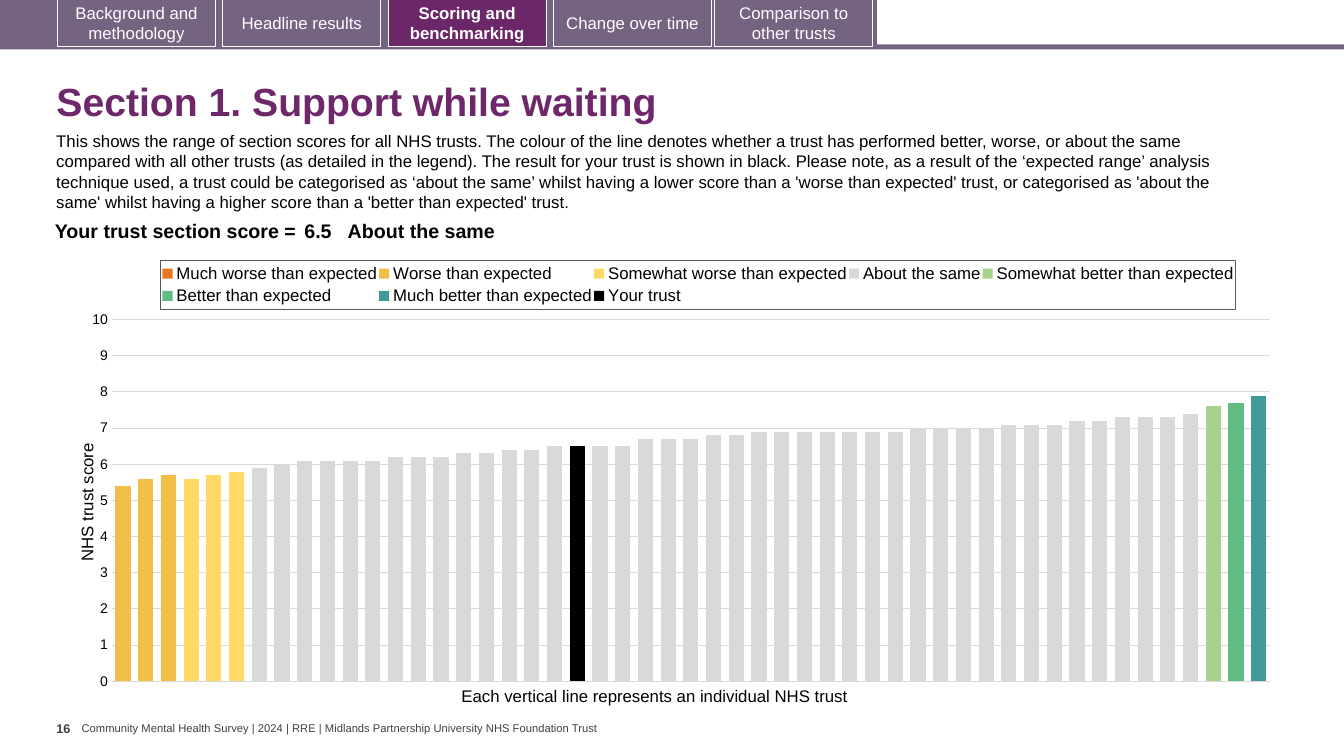
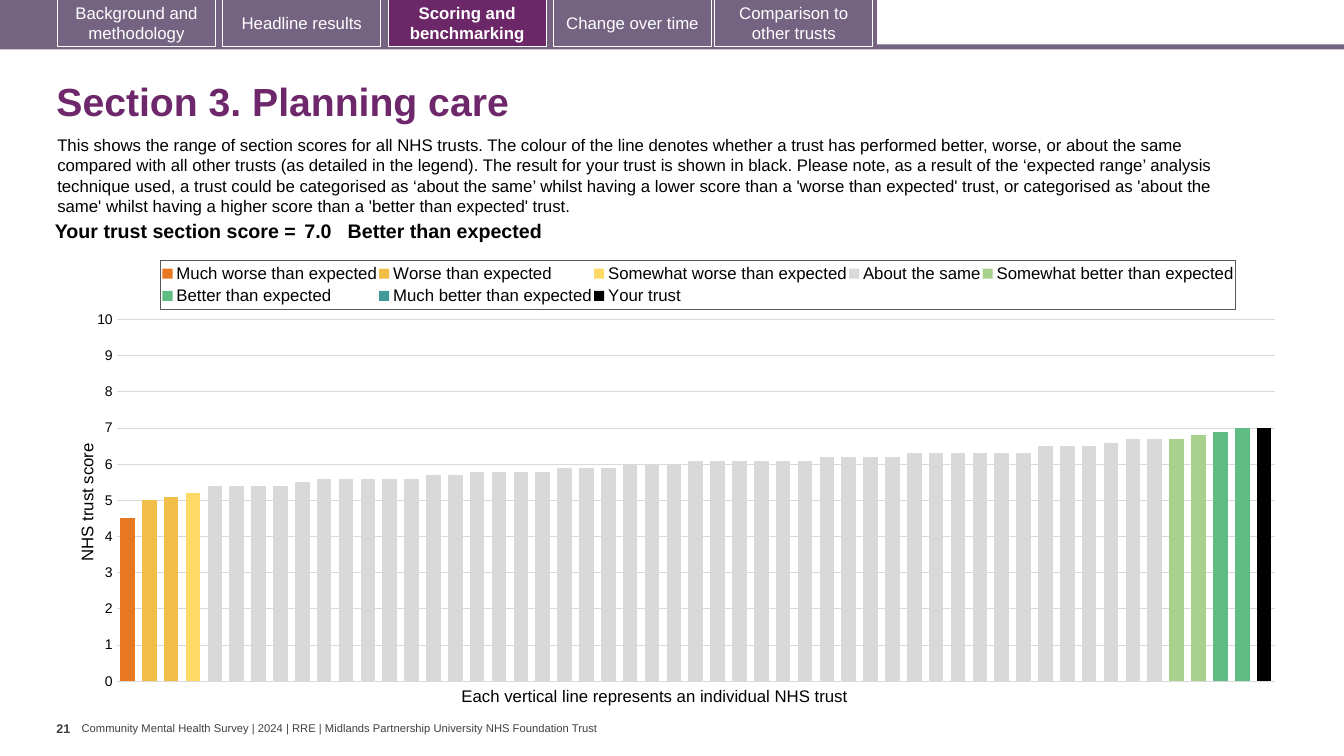
"""Build two survey slides that show how trusts score in a section."""
import copy
import dataclasses
import typing

import pptx
import pptx.chart.data
import pptx.dml.color
import pptx.enum.chart
import pptx.enum.shapes
import pptx.enum.text
import pptx.oxml
import pptx.oxml.ns
import pptx.util

COLS, ROWS = 80, 45
UNIT = pptx.util.Inches(1) / 6
FONT = "Arial"
HUES = {
    "band": "756382",
    "live": "6B2768",
    "title": "6D276A",
    "white": "FFFFFF",
    "black": "000000",
    "foot": "404040",
    "grid": "D9D9D9",
    "frame": "595959",
}
BANDS = {
    "Much worse than expected": "E87722",
    "Worse than expected": "F1BE48",
    "Somewhat worse than expected": "FFD966",
    "About the same": "D9D9D9",
    "Somewhat better than expected": "A9D18E",
    "Better than expected": "5FBD83",
    "Much better than expected": "419999",
}
INTRO = (
    "This shows the range of section scores for all NHS trusts. The colour of the line "
    "denotes whether a trust has performed better, worse, or about the same compared with "
    "all other trusts (as detailed in the legend). The result for your trust is shown in "
    "black. Please note, as a result of the ‘expected range’ analysis technique used, a "
    "trust could be categorised as ‘about the same’ whilst having a lower score than a "
    "'worse than expected' trust, or categorised as 'about the same' whilst having a higher "
    "score than a 'better than expected' trust."
)
FOOTER = (
    "Community Mental Health Survey | 2024 | RRE | "
    "Midlands Partnership University NHS Foundation Trust"
)


class Box(typing.NamedTuple):
    col: float
    row: float
    wide: float
    high: float

    def size(self) -> list[int]:
        return [round(n * UNIT) for n in self]


@dataclasses.dataclass(frozen=True)
class Tab:
    label: str
    col: float
    live: bool = False


@dataclasses.dataclass(frozen=True)
class Style:
    size: float
    hue: str = "black"
    bold: bool = False


@dataclasses.dataclass(frozen=True)
class Section:
    title: str
    page: str
    score: str
    grade: str
    rank: int
    intro: Box
    plot: float
    bands: list[list[float]]


TABS = [
    Tab("Background and methodology", 3.42),
    Tab("Headline results", 13.26),
    Tab("Scoring and benchmarking", 23.1, True),
    Tab("Change over time", 32.94),
    Tab("Comparison to other trusts", 42.54),
]
SECTIONS = [
    Section(
        "Section 1. Support while waiting", "16", "6.5", "About the same", 21,
        Box(2.76, 7.5, 72.78, 5.46), 3.6,
        [
            [],
            [5.4, 5.6, 5.7],
            [5.6, 5.7, 5.8],
            [5.9, 6, 6.1, 6.1, 6.1, 6.1, 6.2, 6.2, 6.2, 6.3, 6.3, 6.4, 6.4, 6.5,
             6.5, 6.5, 6.5, 6.7, 6.7, 6.7, 6.8, 6.8, 6.9, 6.9, 6.9, 6.9, 6.9, 6.9,
             6.9, 7, 7, 7, 7, 7.1, 7.1, 7.1, 7.2, 7.2, 7.3, 7.3, 7.3, 7.4],
            [7.6],
            [7.7],
            [7.9],
        ],
    ),
    Section(
        "Section 3. Planning care", "21", "7.0", "Better than expected", 53,
        Box(2.82, 7.74, 72.78, 5.46), 4,
        [
            [4.5],
            [5, 5.1],
            [5.2],
            [5.4, 5.4, 5.4, 5.4, 5.5, 5.6, 5.6, 5.6, 5.6, 5.6, 5.7, 5.7, 5.8, 5.8,
             5.8, 5.8, 5.9, 5.9, 5.9, 6, 6, 6, 6.1, 6.1, 6.1, 6.1, 6.1, 6.1, 6.2,
             6.2, 6.2, 6.2, 6.3, 6.3, 6.3, 6.3, 6.3, 6.3, 6.5, 6.5, 6.5, 6.6, 6.7, 6.7],
            [6.7, 6.8],
            [6.9, 7, 7],
            [],
        ],
    ),
]


def tint(code: str) -> pptx.dml.color.RGBColor:
    return pptx.dml.color.RGBColor.from_string(code)


def dress(font, style: Style) -> None:
    font.name = FONT
    font.size = pptx.util.Pt(style.size)
    font.bold = style.bold
    font.color.rgb = tint(HUES[style.hue])


def write(frame, text: str, style: Style, align: str = "LEFT"):
    para = frame.paragraphs[0]
    para.alignment = getattr(pptx.enum.text.PP_ALIGN, align)
    run = para.add_run()
    run.text = text
    dress(run.font, style)
    return para


def add_text(slide, box: Box, text: str, style: Style, bare: bool = False) -> None:
    frame = slide.shapes.add_textbox(*box.size()).text_frame
    frame.word_wrap = True
    if bare:
        frame.margin_left = frame.margin_right = 0
    write(frame, text, style)


def add_block(slide, box: Box, hue: str, edge: bool = False):
    kind = pptx.enum.shapes.MSO_SHAPE.RECTANGLE
    shape = slide.shapes.add_shape(kind, *box.size())
    shape.shadow.inherit = False
    shape.fill.solid()
    shape.fill.fore_color.rgb = tint(HUES[hue])
    if edge:
        shape.line.color.rgb = tint(HUES["white"])
        shape.line.width = pptx.util.Pt(0.75)
    else:
        shape.line.fill.background()
    return shape


def add_tabs(slide) -> None:
    add_block(slide, Box(0, 2.64, COLS, 0.3), "band")
    add_block(slide, Box(0, 0, 52.2, 2.82), "band")
    for tab in TABS:
        hue = "live" if tab.live else "band"
        shape = add_block(slide, Box(tab.col, -0.06, 9.42, 2.82), hue, True)
        shape.text_frame.word_wrap = True
        shape.text_frame.vertical_anchor = pptx.enum.text.MSO_ANCHOR.MIDDLE
        write(shape.text_frame, tab.label, Style(12, "white", tab.live), "CENTER")


def add_title(slide, text: str) -> None:
    title = slide.shapes.title
    title.left, title.top, title.width, title.height = Box(2.76, 4.02, 74.94, 4.32).size()
    title.text_frame.vertical_anchor = pptx.enum.text.MSO_ANCHOR.MIDDLE
    write(title.text_frame, text, Style(28, "title", True)).line_spacing = 0.9


def add_score(slide, part: Section) -> None:
    box = Box(2.1, 12.9, 70.14, 1.86)
    table = slide.shapes.add_table(1, 3, *box.size()).table
    table.first_row = table.horz_banding = False
    pad = pptx.util.Inches(0.04)
    cells = [
        ("Your trust section score =", 15.78, "RIGHT", pad),
        (part.score, 2.82, "LEFT", pad),
        (part.grade, 51.54, "LEFT", 0),
    ]
    for spot, (text, wide, align, side) in enumerate(cells):
        table.columns[spot].width = round(wide * UNIT)
        cell = table.cell(0, spot)
        cell.fill.background()
        cell.margin_top = cell.margin_bottom = pad
        cell.margin_left = cell.margin_right = side
        write(cell.text_frame, text, Style(14, bold=True), align)


def arrange(node, spot: int, inner: bool = False, **shares: float) -> None:
    for old in node.xpath("./c:layout"):
        node.remove(old)
    marks = '<c:layoutTarget val="inner"/>' if inner else ""
    marks += '<c:xMode val="edge"/><c:yMode val="edge"/>'
    marks += "".join(f'<c:{key} val="{num / 100:.4f}"/>' for key, num in shares.items())
    space = pptx.oxml.ns.nsdecls("c")
    node.insert(spot, pptx.oxml.parse_xml(
        f"<c:layout {space}><c:manualLayout>{marks}</c:manualLayout></c:layout>"))


def split_last(area) -> None:
    main = area.xpath("./c:barChart")[0]
    extra = copy.deepcopy(main)
    main.remove(main.xpath("./c:ser")[-1])
    for ser in extra.xpath("./c:ser")[:-1]:
        extra.remove(ser)
    main.addnext(extra)
    axes = [copy.deepcopy(axis) for axis in area.xpath("./c:catAx | ./c:valAx")]
    area.xpath("./c:valAx")[0].addnext(axes[0])
    axes[0].addnext(axes[1])
    for node in [extra, *axes]:
        for mark in node.xpath("./c:axId | ./c:crossAx"):
            mark.set("val", mark.get("val").lstrip("-"))
    right = axes[1]
    for node in right.xpath("./c:title | ./c:majorGridlines"):
        right.remove(node)
    for key, word in {"axPos": "r", "tickLblPos": "none", "crosses": "max"}.items():
        right.xpath(f"./c:{key}")[0].set("val", word)


def style_axes(chart) -> None:
    chart.category_axis.visible = False
    axis = chart.value_axis
    axis.minimum_scale, axis.maximum_scale, axis.major_unit = 0, 10, 1
    axis.major_tick_mark = pptx.enum.chart.XL_TICK_MARK.NONE
    axis.format.line.fill.background()
    dress(axis.tick_labels.font, Style(10))
    grid = axis.major_gridlines.format.line
    grid.color.rgb = tint(HUES["grid"])
    grid.width = pptx.util.Pt(0.75)
    title = axis.axis_title
    write(title.text_frame, "NHS trust score", Style(12), "CENTER")
    turn = title.element.xpath(".//a:bodyPr")[0]
    turn.set("rot", "-5400000")
    turn.set("vert", "horz")
    arrange(title.element, 1, x=0.5, y=42.7)


def style_legend(chart) -> None:
    chart.has_legend = True
    legend = chart.legend
    legend.position = pptx.enum.chart.XL_LEGEND_POSITION.TOP
    legend.include_in_layout = False
    dress(legend.font, Style(12))
    node = legend.element if hasattr(legend, "element") else chart.element.xpath(".//c:legend")[0]
    arrange(node, 1, x=7.6, y=2.5, w=87.8, h=11)
    space = pptx.oxml.ns.nsdecls("c", "a")
    node.xpath("./c:overlay")[0].addnext(pptx.oxml.parse_xml(
        f'<c:spPr {space}><a:ln w="9525"><a:solidFill><a:srgbClr val="{HUES["frame"]}"/>'
        "</a:solidFill></a:ln></c:spPr>"))


def add_chart(slide, part: Section) -> None:
    total = sum(map(len, part.bands))
    data = pptx.chart.data.CategoryChartData()
    data.categories = [str(n + 1) for n in range(total)]
    start = 0
    for name, scores in zip(BANDS, part.bands):
        after = total - start - len(scores)
        data.add_series(name, [None] * start + scores + [None] * after)
        start += len(scores)
    own = [float(part.score) if n + 1 == part.rank else None for n in range(total)]
    data.add_series("Your trust", own)
    kind = pptx.enum.chart.XL_CHART_TYPE.COLUMN_CLUSTERED
    box = Box(4.02, 14.82, 72.9, 26.64)
    chart = slide.shapes.add_chart(kind, *box.size(), data).chart
    chart.has_title = False
    dress(chart.font, Style(10))
    plot = chart.plots[0]
    plot.gap_width, plot.overlap, plot.vary_by_categories = 50, 100, False
    for ser, code in zip(plot.series, [*BANDS.values(), HUES["black"]]):
        ser.format.fill.solid()
        ser.format.fill.fore_color.rgb = tint(code)
    style_axes(chart)
    style_legend(chart)
    area = chart.element.xpath(".//c:plotArea")[0]
    arrange(area, 0, True, x=part.plot, y=15.8, w=94.6, h=80.8)
    split_last(area)


def add_footer(slide, page: str) -> None:
    frame = slide.shapes.add_textbox(*Box(4.86, 42.96, 31.8, 0.78).size()).text_frame
    frame.word_wrap = True
    frame.margin_left = frame.margin_right = frame.margin_top = frame.margin_bottom = 0
    frame.vertical_anchor = pptx.enum.text.MSO_ANCHOR.MIDDLE
    write(frame, FOOTER, Style(8, "foot"))
    add_text(slide, Box(3.36, 42.6, 1.5, 2.4), page, Style(9, "foot", True), bare=True)


def main() -> None:
    deck = pptx.Presentation()
    deck.slide_width, deck.slide_height = round(COLS * UNIT), round(ROWS * UNIT)
    for part in SECTIONS:
        slide = deck.slides.add_slide(deck.slide_layouts[5])
        add_tabs(slide)
        add_title(slide, part.title)
        add_text(slide, part.intro, INTRO, Style(12))
        add_chart(slide, part)
        add_text(slide, Box(26.88, 40.5, 25.2, 1.8),
                 "Each vertical line represents an individual NHS trust", Style(12))
        add_score(slide, part)
        add_footer(slide, part.page)
    deck.save("out.pptx")


if __name__ == "__main__":
    main()
